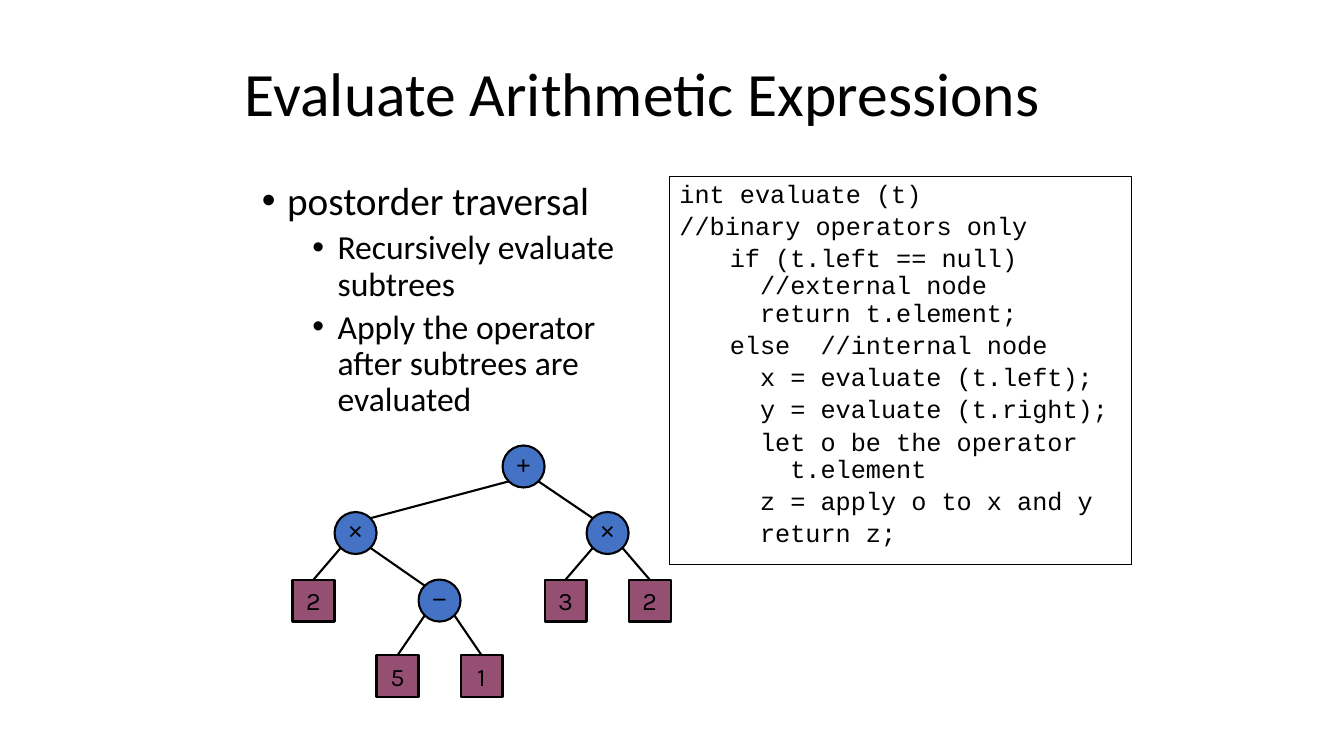
from dataclasses import dataclass
from math import sqrt

from lxml.etree import SubElement
from pptx import Presentation
from pptx.dml.color import RGBColor
from pptx.enum.shapes import MSO_CONNECTOR, MSO_SHAPE
from pptx.enum.text import MSO_ANCHOR, PP_ALIGN
from pptx.oxml.ns import qn
from pptx.shapes.autoshape import Shape
from pptx.shapes.shapetree import GroupShapes
from pptx.slide import Slide
from pptx.text.text import TextFrame
from pptx.util import Inches, Pt


@dataclass(frozen=True)
class Theme:
    ink: RGBColor = RGBColor(0x00, 0x00, 0x00)
    inner: RGBColor = RGBColor(0x44, 0x72, 0xC4)
    leaf: RGBColor = RGBColor(0x95, 0x4F, 0x72)
    sans: str = "Calibri"
    mono: str = "Courier New"
    sign: str = "Arial"
    digit: str = "Karla"
    title: int = 44
    point: int = 28
    sub: int = 24
    small: int = 18
    thin: float = 0.75
    thick: float = 1.5


@dataclass(frozen=True)
class Para:
    lines: tuple[str, ...]
    font: str
    size: int
    left: float = 0
    first: float = 0
    above: float = 0
    tight: float = 0.9
    mark: str = ""
    align: PP_ALIGN = PP_ALIGN.LEFT


@dataclass(frozen=True)
class Node:
    text: str
    col: int
    row: int
    boss: int | None = None
    leaf: bool = False

    @property
    def mid(self) -> tuple[float, float]:
        return FIRST + self.col * STEP, ROWS[self.row] + SIDE / 2


THEME = Theme()
SIDE = 5 / 12
STEP = SIDE
FIRST = 3.11
ROWS = (4.42, 5.08, 5.75, 6.5)
CHAR = 0.15

TREE = (
    Node("+", 5, 0),
    Node("×", 7, 1, 0),
    Node("×", 1, 1, 0),
    Node("−", 3, 2, 2),
    Node("2", 0, 2, 2, True),
    Node("5", 2, 3, 3, True),
    Node("1", 4, 3, 3, True),
    Node("3", 6, 2, 1, True),
    Node("2", 8, 2, 1, True),
)


def point(text: str, size: int, left: float, above: float) -> Para:
    return Para((text,), THEME.sans, size, left, -0.25, above, mark="•")


def code(*lines: str, left: float = 0, hang: int = 0) -> Para:
    shift = hang * CHAR
    return Para(lines, THEME.mono, THEME.small, left + shift, -shift, 3.6)


BLOCK = 0.5
DEEP = BLOCK + 2 * CHAR
POINTS = (
    point("postorder traversal", THEME.point, 0.25, 10),
    point("Recursively evaluate subtrees", THEME.sub, 0.75, 5),
    point("Apply the operator after subtrees are evaluated", THEME.sub, 0.75, 5),
)
CODE = (
    code("int evaluate (t)"),
    code("//binary operators only"),
    code("if (t.left == null)", "//external node", "return t.element;", left=BLOCK, hang=2),
    code("else  //internal node", left=BLOCK),
    code("x = evaluate (t.left);", left=DEEP),
    code("y = evaluate (t.right);", left=DEEP),
    code("let o be the operator", "t.element", left=DEEP, hang=2),
    code("z = apply o to x and y", left=DEEP),
    code("return z;", left=DEEP),
)


def write(frame: TextFrame, paras: tuple[Para, ...]) -> None:
    for index, item in enumerate(paras):
        para = frame.add_paragraph() if index else frame.paragraphs[0]
        para.alignment = item.align
        para.line_spacing = item.tight
        para.space_before = Pt(item.above)
        props = para._p.get_or_add_pPr()
        props.set("marL", str(Inches(item.left)))
        props.set("indent", str(Inches(item.first)))
        if item.mark:
            SubElement(props, qn("a:buFont")).set("typeface", "Arial")
            SubElement(props, qn("a:buChar")).set("char", item.mark)
        for count, line in enumerate(item.lines):
            if count:
                para.add_line_break()
            run = para.add_run()
            run.text = line
            run.font.name = item.font
            run.font.size = Pt(item.size)
            run.font.color.rgb = THEME.ink


def place(slide: Slide, box: tuple[float, ...], paras: tuple[Para, ...],
          anchor: MSO_ANCHOR = MSO_ANCHOR.TOP) -> Shape:
    shape = slide.shapes.add_textbox(*map(Inches, box))
    frame = shape.text_frame
    frame.word_wrap = True
    frame.vertical_anchor = anchor
    write(frame, paras)
    return shape


def draw(shapes: GroupShapes, node: Node) -> None:
    x, y = node.mid
    kind = MSO_SHAPE.RECTANGLE if node.leaf else MSO_SHAPE.OVAL
    box = (x - SIDE / 2, y - SIDE / 2, SIDE, SIDE)
    shape = shapes.add_shape(kind, *map(Inches, box))
    shape.shadow.inherit = False
    shape.fill.solid()
    shape.fill.fore_color.rgb = THEME.leaf if node.leaf else THEME.inner
    shape.line.color.rgb = THEME.ink
    shape.line.width = Pt(THEME.thick)
    frame = shape.text_frame
    frame.word_wrap = False
    frame.vertical_anchor = MSO_ANCHOR.MIDDLE
    if not node.leaf:
        frame.margin_left = frame.margin_right = frame.margin_top = 0
        frame.margin_bottom = Inches(0.05)
    font = THEME.digit if node.leaf else THEME.sign
    write(frame, (Para((node.text,), font, THEME.small, tight=1.0, align=PP_ALIGN.CENTER),))


def join(shapes: GroupShapes, boss: Node, node: Node) -> None:
    (bx, by), (x, y) = boss.mid, node.mid
    reach = SIDE / 2 / sqrt(2)
    side = reach if x > bx else -reach
    start = (bx + side, by + reach)
    end = (x, y - SIDE / 2) if node.leaf else (x - side, y - reach)
    edge = shapes.add_connector(MSO_CONNECTOR.STRAIGHT, *map(Inches, start + end))
    edge.line.color.rgb = THEME.ink
    edge.line.width = Pt(THEME.thick)
    SubElement(edge._element.spPr, qn("a:effectLst"))


def main() -> None:
    deck = Presentation()
    deck.slide_width, deck.slide_height = Inches(13.33), Inches(7.5)
    slide = deck.slides.add_slide(deck.slide_layouts[6])
    title = Para(("Evaluate Arithmetic Expressions",), THEME.sans, THEME.title)
    place(slide, (2.33, 0.33, 8.92, 1.25), (title,), MSO_ANCHOR.MIDDLE)
    place(slide, (2.5, 1.75, 4.08, 2.58), POINTS)
    panel = place(slide, (6.64, 1.75, 4.58, 3.85), CODE)
    panel.line.color.rgb = THEME.ink
    panel.line.width = Pt(THEME.thin)
    group = slide.shapes.add_group_shape().shapes
    for node in TREE:
        draw(group, node)
    for node in TREE:
        if node.boss is not None:
            join(group, TREE[node.boss], node)
    deck.save("out.pptx")


if __name__ == "__main__":
    main()
